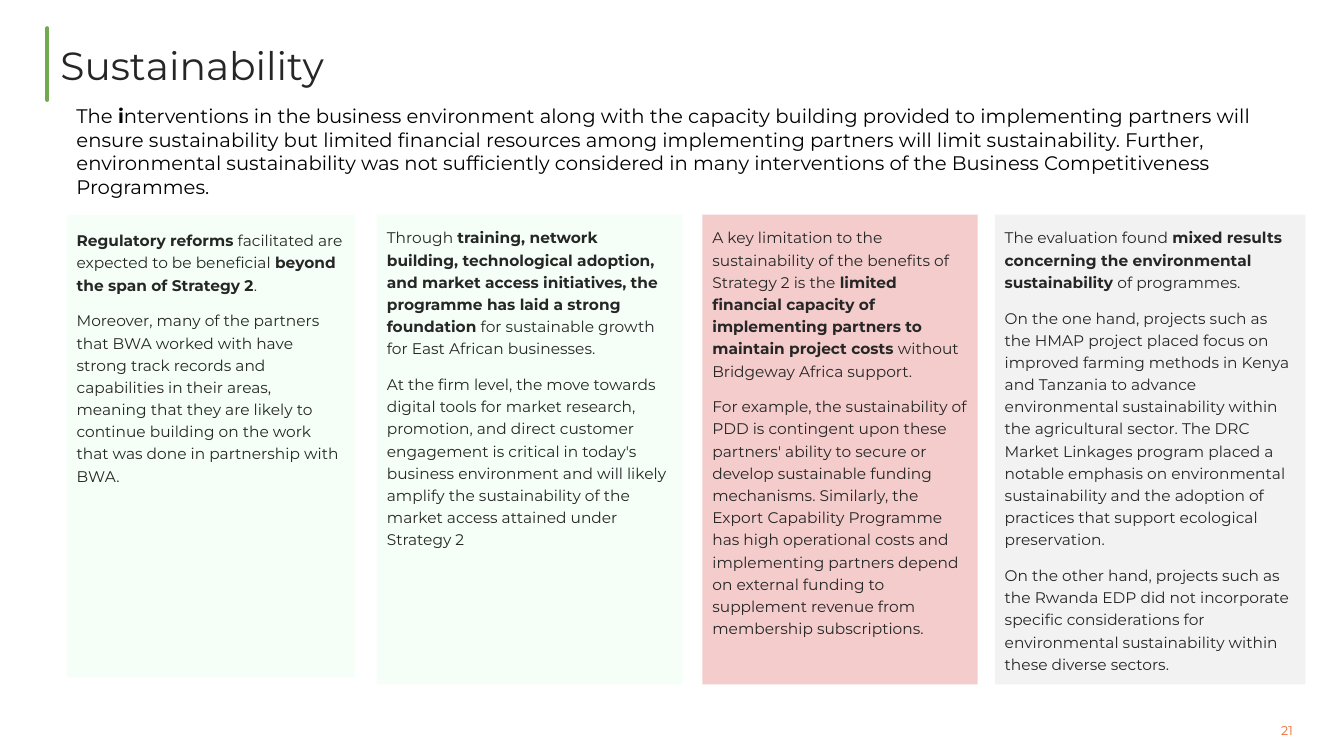
"""Build the Sustainability findings slide."""
import pptx
import pptx.dml.color
import pptx.enum.shapes
import pptx.enum.text
import pptx.oxml.ns
import pptx.util
from lxml import etree

Pt = pptx.util.Pt
RGBColor = pptx.dml.color.RGBColor
ANCHOR = pptx.enum.text.MSO_ANCHOR
LEFT = pptx.enum.text.PP_ALIGN.LEFT
qn = pptx.oxml.ns.qn

FONT = "Montserrat"
INK = RGBColor(0x26, 0x26, 0x26)
BLACK = RGBColor(0, 0, 0)
GREEN = RGBColor(0x72, 0xA8, 0x4E)
ORANGE = RGBColor(0xF2, 0x67, 0x2B)
MINT = RGBColor(0xF5, 0xFF, 0xF7)
PINK = RGBColor(0xF4, 0xCC, 0xCC)
GREY = RGBColor(0xF2, 0xF2, 0xF2)


def set_frame(frame, anchor, side, top):
    frame.word_wrap = True
    frame.auto_size = pptx.enum.text.MSO_AUTO_SIZE.NONE
    frame.vertical_anchor = anchor
    frame.margin_left = frame.margin_right = Pt(side)
    frame.margin_top = frame.margin_bottom = Pt(top)


def add_runs(paragraph, marked_text, size, color):
    """Write runs, with the parts between ** marks in bold."""
    paragraph.alignment = LEFT
    for position, part in enumerate(marked_text.split("**")):
        if part:
            run = paragraph.add_run()
            run.text = part
            run.font.name = FONT
            run.font.size = Pt(size)
            run.font.bold = position % 2 == 1
            run.font.color.rgb = color


deck = pptx.Presentation()
deck.slide_width, deck.slide_height = Pt(960), Pt(540)
slide = deck.slides.add_slide(deck.slide_layouts[1])
shapes = slide.shapes

accent = shapes.add_connector(
    pptx.enum.shapes.MSO_CONNECTOR.STRAIGHT, Pt(33.8), Pt(20.2), Pt(33.8), Pt(71.3))
accent.line.color.rgb = GREEN
accent.line.width = Pt(3)
accent_properties = accent._element.spPr
accent_properties.find(qn("a:ln")).set("cap", "rnd")
etree.SubElement(accent_properties, qn("a:effectLst"))

title = shapes.title
title.left, title.top, title.width, title.height = Pt(36), Pt(20.9), Pt(890), Pt(50.4)
set_frame(title.text_frame, ANCHOR.MIDDLE, 7.2, 3.6)
add_runs(title.text_frame.paragraphs[0], "Sustainability", 28, INK)

labels = [
    (47.5, 67, 867.6, 82, ANCHOR.TOP, 7.2, 14, BLACK,
     "The **i**nterventions in the business environment along with the capacity building "
     "provided to implementing partners will ensure sustainability but limited financial "
     "resources among implementing partners will limit sustainability. Further, "
     "environmental sustainability was not sufficiently considered in many interventions "
     "of the Business Competitiveness Programmes."),
    (915.1, 516.2, 36, 10.8, ANCHOR.BOTTOM, 0, 9, ORANGE, "21"),
]
for left, top, width, height, anchor, margin, size, color, text in labels:
    label = shapes.add_textbox(Pt(left), Pt(top), Pt(width), Pt(height))
    set_frame(label.text_frame, anchor, margin, margin)
    add_runs(label.text_frame.paragraphs[0], text, size, color)

findings = [
    (47.5, 205.9, 330.5, 9.2, MINT, [
        "**Regulatory reforms** facilitated are expected to be beneficial "
        "**beyond the span of Strategy 2**.",
        "Moreover, many of the partners that BWA worked with have strong track records and "
        "capabilities in their areas, meaning that they are likely to continue building on "
        "the work that was done in partnership with BWA."]),
    (269.3, 218.2, 335.5, 7.2, MINT, [
        "Through **training, network building, technological adoption, and market access "
        "initiatives, the programme has laid a strong foundation** for sustainable growth "
        "for East African businesses.",
        "At the firm level, the move towards digital tools for market research, promotion, "
        "and direct customer engagement is critical in today's business environment and "
        "will likely amplify the sustainability of the market access attained under "
        "Strategy 2"]),
    (501.8, 196.6, 335.5, 7.2, PINK, [
        "A key limitation to the sustainability of the benefits of Strategy 2 is the "
        "**limited financial capacity of implementing partners to maintain project costs** "
        "without Bridgeway Africa support.",
        "For example, the sustainability of PDD is contingent upon these partners' ability "
        "to secure or develop sustainable funding mechanisms. Similarly, the Export "
        "Capability Programme has high operational costs and implementing partners depend "
        "on external funding to supplement revenue from membership subscriptions."]),
    (710.6, 221.8, 335.5, 7.2, GREY, [
        "The evaluation found **mixed results concerning the environmental "
        "sustainability** of programmes.",
        "On the one hand, projects such as the HMAP project placed focus on improved "
        "farming methods in Kenya and Tanzania to advance environmental sustainability "
        "within the agricultural sector. The DRC Market Linkages program placed a notable "
        "emphasis on environmental sustainability and the adoption of practices that "
        "support ecological preservation.",
        "On the other hand, projects such as the Rwanda EDP did not incorporate specific "
        "considerations for environmental sustainability within these diverse sectors."]),
]
for column, (left, width, height, inset, fill, paragraphs) in enumerate(findings):
    if column == 0:
        panel = slide.placeholders[1]
        panel.left, panel.top, panel.width, panel.height = (
            Pt(left), Pt(153.4), Pt(width), Pt(height))
    else:
        panel = shapes.add_shape(
            pptx.enum.shapes.MSO_SHAPE.RECTANGLE,
            Pt(left), Pt(153.4), Pt(width), Pt(height))
        panel.shadow.inherit = False
    panel.fill.solid()
    panel.fill.fore_color.rgb = fill
    panel.line.fill.background()
    frame = panel.text_frame
    set_frame(frame, ANCHOR.TOP, 7.2, inset)
    for number, text in enumerate(paragraphs):
        paragraph = frame.add_paragraph() if number else frame.paragraphs[0]
        paragraph.line_spacing = 1.2
        paragraph.space_before = Pt(9.7 if number else 3.7)
        properties = paragraph._p.get_or_add_pPr()
        properties.set("marL", "0")
        properties.set("indent", "0")
        etree.SubElement(properties, qn("a:buNone"))
        add_runs(paragraph, text, 11, INK)

deck.save("out.pptx")
